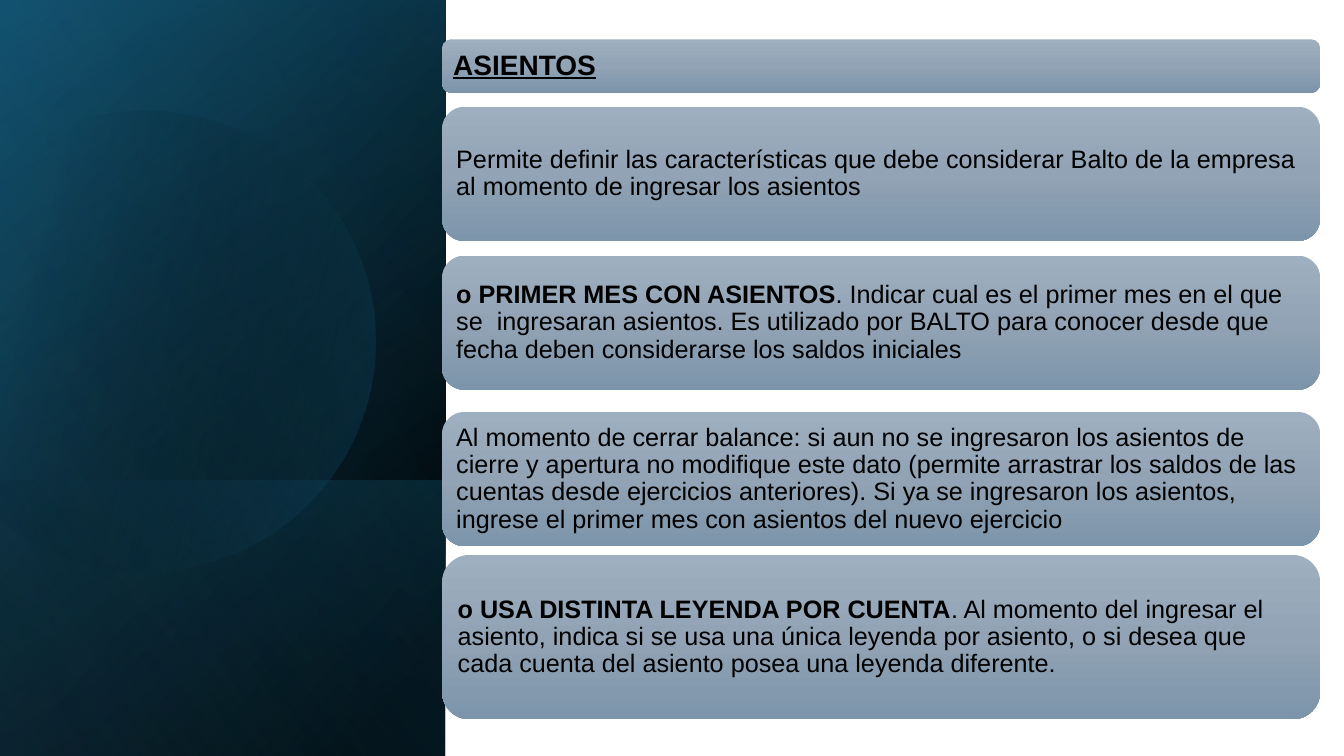
"""Build the ASIENTOS slide: a dark gradient panel beside five text cards."""
import math
from dataclasses import dataclass

from pptx import Presentation, util as u
from pptx.dml.color import RGBColor
from pptx.enum import shapes, text
from pptx.oxml import parse_xml
from pptx.oxml.ns import nsdecls, qn


@dataclass(frozen=True)
class Theme:
    font: str = "Arial"
    ink: RGBColor = RGBColor(0, 0, 0)
    paper: RGBColor = RGBColor(255, 255, 255)
    title_size: float = 20
    body_size: float = 18
    black: str = "000000"
    navy: str = "104862"
    teal: str = "156082"
    sky: str = "46B1E1"
    card: tuple = ((0, "9EAFBF", 100), (50, "91A3B4", 100), (100, "7C95AB", 100))


def paint(shape, stops, angle):
    """Give a shape a linear gradient of (position, colour, opacity) stops."""
    shape.shadow.inherit = False
    shape.line.fill.background()
    shape.fill.gradient()
    marks = "".join(
        f'<a:gs pos="{place * 1000}"><a:srgbClr val="{colour}">'
        f'<a:alpha val="{opacity * 1000}"/></a:srgbClr></a:gs>'
        for place, colour, opacity in stops
    )
    properties = shape._element.spPr
    properties.replace(
        properties.find(qn("a:gradFill")),
        parse_xml(
            f'<a:gradFill {nsdecls("a")} rotWithShape="1"><a:gsLst>{marks}</a:gsLst>'
            f'<a:lin ang="{angle * 60000}" scaled="0"/></a:gradFill>'
        ),
    )


theme = Theme()
deck = Presentation()
deck.slide_width, deck.slide_height = u.Pt(960), u.Pt(540)
page = deck.slides.add_slide(deck.slide_layouts[6])

backdrop = page.shapes.add_shape(
    shapes.MSO_SHAPE.RECTANGLE, 0, 0, deck.slide_width, deck.slide_height
)
backdrop.shadow.inherit = False
backdrop.line.fill.background()
backdrop.fill.solid()
backdrop.fill.fore_color.rgb = theme.paper

panel_width = 318.2
panel_layers = [
    (540, ((8, theme.black, 100), (100, theme.navy, 100)), 50),
    (540, ((0, theme.black, 0), (99, theme.teal, 46)), 30),
    (197, ((2, theme.teal, 29), (100, theme.black, 30)), 130),
    (540, ((0, theme.black, 0), (99, theme.sky, 11)), 120),
]
panels = []
for depth, stops, angle in panel_layers:
    left = (panel_width - depth) / 2
    top = 540 - (depth + panel_width) / 2
    panel = page.shapes.add_shape(
        shapes.MSO_SHAPE.RECTANGLE, u.Pt(left), u.Pt(top), u.Pt(depth), u.Pt(panel_width)
    )
    panel.rotation = 90
    panel._element.spPr.xfrm.set("flipH", "1")
    paint(panel, stops, angle)
    panels.append(panel)

centre_x, centre_y, radius = 103, 240.8, 164.5
arc_start, arc_end = -118, 150
rim = [
    (
        u.Pt(centre_x + radius * math.cos(math.radians(degree))),
        u.Pt(centre_y + radius * math.sin(math.radians(degree))),
    )
    for degree in (arc_start, -90, 0, 90, arc_end)
]
outline = page.shapes.build_freeform(*rim[0])
outline.add_line_segments(rim[1:], close=True)
disc = outline.convert_to_shape()
disc.rotation = 343.9
paint(disc, ((29, theme.black, 0), (100, theme.teal, 43)), 30)
chords = list(disc._element.iter(qn("a:lnTo")))
chords[0].addprevious(
    parse_xml(
        f'<a:arcTo {nsdecls("a")} wR="{u.Pt(radius)}" hR="{u.Pt(radius)}" '
        f'stAng="{arc_start % 360 * 60000}" swAng="{(arc_end - arc_start) * 60000}"/>'
    )
)
for chord in chords:
    chord.getparent().remove(chord)
panels[-1]._element.addprevious(disc._element)

cards = [
    (28.1, 38.2, "ASIENTOS", ""),
    (76.3, 95.8, "", "Permite definir las características que debe considerar Balto "
     "de la empresa al momento de ingresar los asientos"),
    (182.6, 95.8, "o PRIMER MES CON ASIENTOS", ". Indicar cual es el primer mes en el "
     "que se  ingresaran asientos. Es utilizado por BALTO para conocer desde que fecha "
     "deben considerarse los saldos iniciales"),
    (294.3, 95.8, "", "Al momento de cerrar balance: si aun no se ingresaron los asientos "
     "de cierre y apertura no modifique este dato (permite arrastrar los saldos de las "
     "cuentas desde ejercicios anteriores). Si ya se ingresaron los asientos, ingrese el "
     "primer mes con asientos del nuevo ejercicio"),
    (396.4, 117.4, "o USA DISTINTA LEYENDA POR CUENTA", ". Al momento del ingresar el "
     "asiento, indica si se usa una única leyenda por asiento, o si desea que cada cuenta "
     "del asiento posea una leyenda diferente."),
]
for top, height, heading, body in cards:
    card = page.shapes.add_shape(
        shapes.MSO_SHAPE.ROUNDED_RECTANGLE, u.Pt(315.8), u.Pt(top), u.Pt(627.1), u.Pt(height)
    )
    paint(card, theme.card, 90)
    is_title = not body
    frame = card.text_frame
    frame.word_wrap = True
    frame.vertical_anchor = text.MSO_ANCHOR.MIDDLE
    inset = u.Pt(6 if is_title else 5.4)
    frame.margin_left = frame.margin_right = inset
    frame.margin_top = frame.margin_bottom = inset
    para = frame.paragraphs[0]
    para.alignment = text.PP_ALIGN.LEFT
    para.line_spacing = 0.9
    for words, bold in ((heading, True), (body, False)):
        if words:
            span = para.add_run()
            span.text = words
            span.font.name = theme.font
            span.font.size = u.Pt(theme.title_size if is_title else theme.body_size)
            span.font.color.rgb = theme.ink
            span.font.bold = bold
            span.font.underline = is_title

deck.save("out.pptx")
